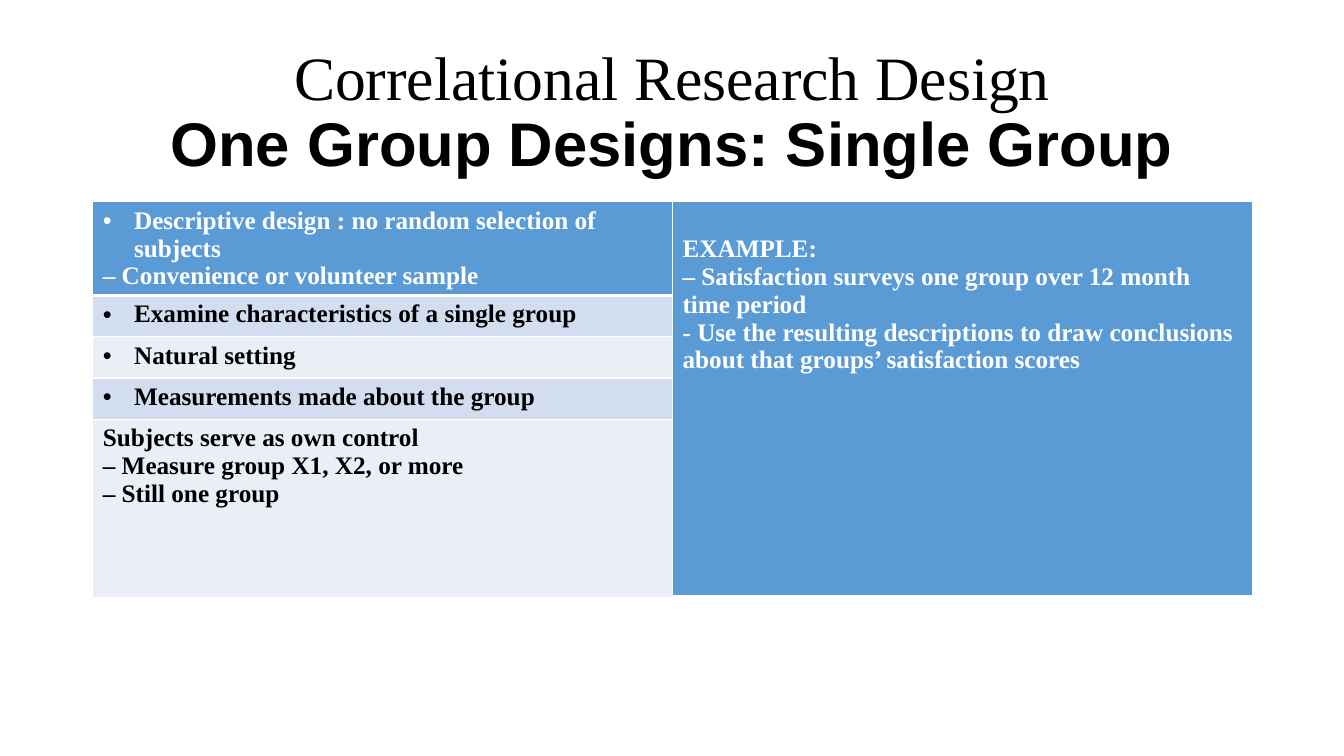
import pptx
import pptx.dml.color
import pptx.enum.text
import pptx.oxml
import pptx.oxml.ns
import pptx.util
from dataclasses import dataclass

Inches, Pt = pptx.util.Inches, pptx.util.Pt
RGB = pptx.dml.color.RGBColor.from_string

TITLE = [
    ("Correlational Research Design", "Times New Roman", False),
    ("One Group Designs: Single Group", "Arial", True),
]
# Each feature: row height in inches, then (text, bulleted) lines
FEATURES = [
    (0.92, [("Descriptive design : no random selection of subjects", True),
            ("– Convenience or volunteer sample", False)]),
    (0.41, [("Examine characteristics of a single group", True)]),
    (0.41, [("Natural setting", True)]),
    (0.41, [("Measurements made about the group", True)]),
    (1.76, [("Subjects serve as own control", False),
            ("– Measure group X1, X2, or more", False),
            ("– Still one group", False)]),
]
EXAMPLE = [
    ("EXAMPLE:", False),
    ("– Satisfaction surveys one group over 12 month time period", False),
    ("- Use the resulting descriptions to draw conclusions about that groups’ "
     "satisfaction scores", False),
]


@dataclass(frozen=True)
class Theme:
    header: str = "5B9BD5"
    bands: tuple = ("D2DEEF", "EAEFF7")
    light: str = "FFFFFF"
    dark: str = "000000"
    body_font: str = "Times New Roman"
    title_size: int = 44
    body_size: int = 18
    bullet_indent: float = 0.31
    rule: int = 1
    header_rule: int = 3


THEME = Theme()
LEFT, WIDTH, TABLE_TOP = 0.92, 11.5, 2


def add_text(paragraph, text, *, font=THEME.body_font, size=THEME.body_size,
             color=THEME.dark, bold=True, bulleted=False):
    if bulleted:
        properties = paragraph._p.get_or_add_pPr()
        indent = Inches(THEME.bullet_indent)
        properties.set("marL", str(indent))
        properties.set("indent", str(-indent))
        ns = pptx.oxml.ns.nsdecls("a")
        for bullet in (f'<a:buFont {ns} typeface="Arial"/>', f'<a:buChar {ns} char="•"/>'):
            properties.append(pptx.oxml.parse_xml(bullet))
    run = paragraph.add_run()
    run.text = text
    run.font.name, run.font.size, run.font.bold = font, Pt(size), bold
    run.font.color.rgb = RGB(color)


def add_borders(cell, bottom):
    ns = pptx.oxml.ns.nsdecls("a")
    widths = {"L": THEME.rule, "R": THEME.rule, "T": THEME.rule, "B": bottom}
    for position, (side, width) in enumerate(widths.items()):
        cell._tc.get_or_add_tcPr().insert(position, pptx.oxml.parse_xml(
            f'<a:ln{side} {ns} w="{Pt(width)}"><a:solidFill>'
            f'<a:srgbClr val="{THEME.light}"/></a:solidFill></a:ln{side}>'))


def fill_cell(cell, lines, fill, color, bottom=THEME.rule):
    cell.fill.solid()
    cell.fill.fore_color.rgb = RGB(fill)
    add_borders(cell, bottom)
    frame = cell.text_frame
    for number, (text, bulleted) in enumerate(lines):
        paragraph = frame.add_paragraph() if number else frame.paragraphs[0]
        add_text(paragraph, text, color=color, bulleted=bulleted)


def add_title(slide):
    title = slide.shapes.title
    title.left, title.top = Inches(LEFT), Inches(0.4)
    title.width, title.height = Inches(WIDTH), Inches(1.45)
    frame = title.text_frame
    frame.auto_size = pptx.enum.text.MSO_AUTO_SIZE.NONE
    frame.vertical_anchor = pptx.enum.text.MSO_ANCHOR.MIDDLE
    heading = frame.paragraphs[0]
    heading.alignment = pptx.enum.text.PP_ALIGN.CENTER
    heading.line_spacing = 0.9
    for number, (text, font, bold) in enumerate(TITLE):
        if number:
            heading.add_line_break()
        add_text(heading, text, font=font, size=THEME.title_size, bold=bold)


def add_design_table(slide):
    height = sum(row_height for row_height, _ in FEATURES)
    design = slide.shapes.add_table(len(FEATURES), 2, Inches(LEFT), Inches(TABLE_TOP),
                                    Inches(WIDTH), Inches(height)).table
    for row, (row_height, lines) in enumerate(FEATURES):
        design.rows[row].height = Inches(row_height)
        if row == 0:
            fill_cell(design.cell(row, 0), lines, THEME.header, THEME.light,
                      THEME.header_rule)
        else:
            fill_cell(design.cell(row, 0), lines, THEME.bands[(row - 1) % 2], THEME.dark)
    example = design.cell(0, 1)
    example.merge(design.cell(len(FEATURES) - 1, 1))
    example.margin_top = Inches(0.33)
    fill_cell(example, EXAMPLE, THEME.header, THEME.light, THEME.header_rule)


def main():
    deck = pptx.Presentation()
    deck.slide_width, deck.slide_height = Inches(13.33), Inches(7.5)
    slide = deck.slides.add_slide(deck.slide_layouts.get_by_name("Title Only"))
    add_title(slide)
    add_design_table(slide)
    deck.save("out.pptx")


if __name__ == "__main__":
    main()
